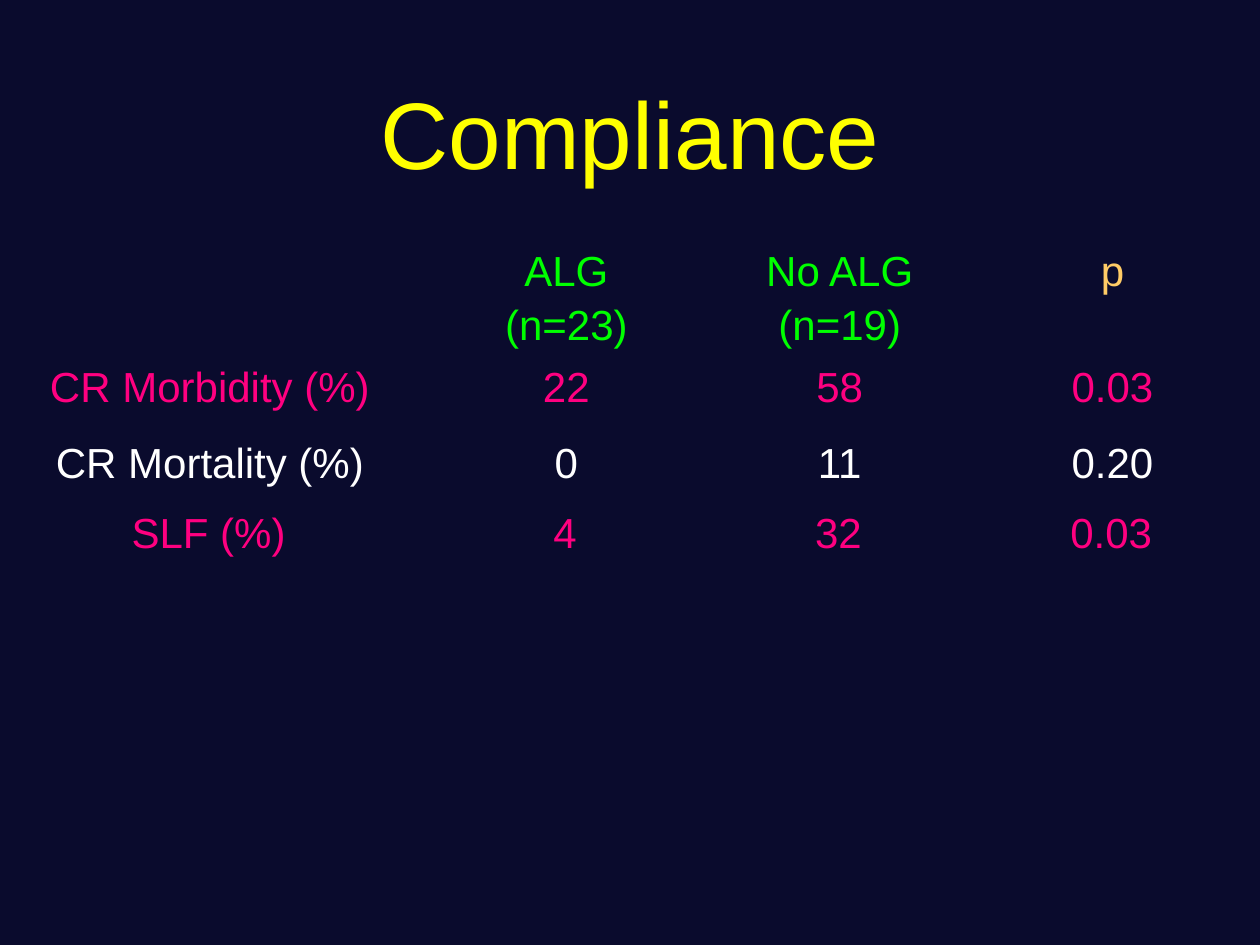
from dataclasses import dataclass

from pptx import Presentation
from pptx.dml.color import RGBColor as Rgb
from pptx.enum.text import MSO_ANCHOR as Anchor, PP_ALIGN as Align
from pptx.oxml.ns import qn
from pptx.util import Inches, Pt

WIDE, HIGH = 10, 7.5
COLS = (3.33, 2.33, 2.01, 2.32)
PLAIN = "{2D5ABB26-0587-4C30-8999-92F81FD0307C}"  # no style, no grid
GREEN, GOLD, PINK, WHITE = "00FF00", "FFCC66", "FF0080", "FFFFFF"


@dataclass
class Row:
    high: float
    cells: tuple[str, ...]
    hues: tuple[str, ...]


@dataclass
class Grid:
    left: float
    top: float
    rows: list[Row]


GRIDS = [
    Grid(0, 1.92, [
        Row(0.92, ("", "ALG\n(n=23)", "No ALG\n(n=19)", "p"),
            (GREEN, GREEN, GREEN, GOLD)),
        Row(0.6, ("CR Morbidity (%)", "22", "58", "0.03"), (PINK,) * 4),
        Row(0.6, ("CR Mortality (%)", "0", "11", "0.20"), (WHITE,) * 4),
    ]),
    Grid(-0.01, 4, [
        Row(0.53, ("SLF (%)", "4", "32", "0.03"), (PINK,) * 4),
    ]),
]


def color(code: str) -> Rgb:
    return Rgb.from_string(code)


def write(frame, text: str, *, size: float, hue: str, space: float = 1) -> None:
    frame.text = text
    for para in frame.paragraphs:
        para.alignment = Align.CENTER
        para.line_spacing = space
        for font in [para.font] + [run.font for run in para.runs]:
            font.name, font.size = "Arial", Pt(size)
            font.color.rgb = color(hue)


def draw(slide, grid: Grid) -> None:
    high = sum(row.high for row in grid.rows)
    table = slide.shapes.add_table(
        len(grid.rows), len(COLS), Inches(grid.left), Inches(grid.top),
        Inches(sum(COLS)), Inches(high)).table
    table.first_row = table.horz_banding = False
    table._tbl.tblPr.find(qn("a:tableStyleId")).text = PLAIN
    for col, wide in zip(table.columns, COLS):
        col.width = Inches(wide)
    for line, row in zip(table.rows, grid.rows):
        line.height = Inches(row.high)
        for cell, text, hue in zip(line.cells, row.cells, row.hues):
            cell.fill.background()
            cell.margin_left = cell.margin_right = Inches(0.07)
            cell.margin_top = cell.margin_bottom = 0
            cell.vertical_anchor = Anchor.TOP
            write(cell.text_frame, text, size=24, hue=hue, space=1.15)


def main() -> None:
    deck = Presentation()
    deck.slide_width, deck.slide_height = Inches(WIDE), Inches(HIGH)
    slide = deck.slides.add_slide(deck.slide_layouts[5])

    # Background
    fill = slide.background.fill
    fill.solid()
    fill.fore_color.rgb = color("0A0B2D")

    # Title
    title = slide.shapes.title
    title.left, title.top = 0, Inches(0.42)
    title.width, title.height = Inches(WIDE), Inches(HIGH / 6)
    title.text_frame.vertical_anchor = Anchor.MIDDLE
    write(title.text_frame, "Compliance", size=54, hue="FFFF00")

    # Result tables
    for grid in GRIDS:
        draw(slide, grid)

    deck.save("out.pptx")


if __name__ == "__main__":
    main()
